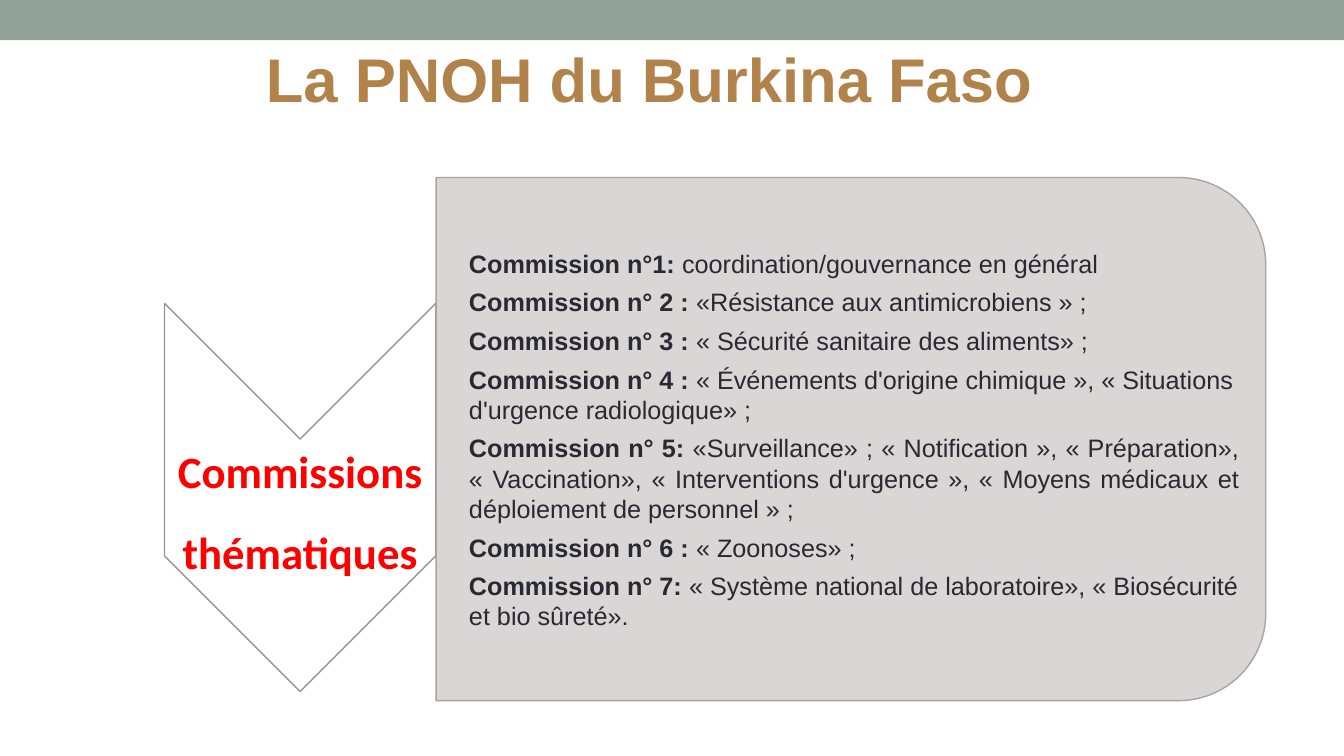
import pptx
import pptx.util
import pptx.dml.color
import pptx.enum.shapes
import pptx.enum.text
import pptx.oxml
import pptx.oxml.ns

Pt = pptx.util.Pt
Form = pptx.enum.shapes.MSO_SHAPE
Align = pptx.enum.text.PP_ALIGN
Anchor = pptx.enum.text.MSO_ANCHOR

# Content: label, text, justified
TITLE = "La PNOH du Burkina Faso"
THEME = "Commissions thématiques"
ITEMS = [
    ("Commission n°1:", "coordination/gouvernance en général", True),
    ("Commission n° 2 :", "«Résistance aux antimicrobiens » ;", False),
    ("Commission n° 3 :", "« Sécurité sanitaire des aliments» ;", False),
    ("Commission n° 4 :", "« Événements d'origine chimique », "
     "« Situations d'urgence radiologique» ;", False),
    ("Commission n° 5:", "«Surveillance» ; « Notification », « Préparation», "
     "« Vaccination», « Interventions d'urgence », "
     "« Moyens médicaux et déploiement de personnel » ;", True),
    ("Commission n° 6 :", "« Zoonoses» ;", False),
    ("Commission n° 7:", "« Système national de laboratoire», "
     "« Biosécurité et bio sûreté».", False),
]
COLORS = {"band": "93A299", "white": "FFFFFF", "edge": "969696", "red": "FF0000",
          "panel": "D5D2D1", "rim": "A5A5A5", "ink": "292934", "gold": "B1824A"}
WIDE, HIGH = 960, 540


def shade(name):
    return pptx.dml.color.RGBColor.from_string(COLORS[name])


def add_form(slide, kind, box, fill, line=None, turn=False, alpha=None):
    """Draw a shape in its visible box; turn lays it a quarter turn clockwise."""
    left, top, wide, high = box
    if turn:
        left, top = left + (wide - high) / 2, top + (high - wide) / 2
        wide, high = high, wide
    form = slide.shapes.add_shape(kind, Pt(left), Pt(top), Pt(wide), Pt(high))
    form.shadow.inherit = False
    form.rotation = 90 if turn else 0
    form.fill.solid()
    form.fill.fore_color.rgb = shade(fill)
    if alpha:
        tint = form.fill._xPr.find(".//" + pptx.oxml.ns.qn("a:srgbClr"))
        tint.append(pptx.oxml.parse_xml(
            f'<a:alpha {pptx.oxml.ns.nsdecls("a")} val="{alpha * 1000}"/>'))
    if line:
        form.line.color.rgb = shade(line)
        form.line.width = Pt(1)
    else:
        form.line.fill.background()


def add_text(slide, box, paras, size, font, color, pad=None, wrap=True,
             anchor=Anchor.MIDDLE, after=0, space=None, indent=0):
    """Write paragraphs given as (alignment, [(text, bold), ...])."""
    frame = slide.shapes.add_textbox(*map(Pt, box)).text_frame
    frame.word_wrap = wrap
    frame.vertical_anchor = anchor
    if pad:
        (frame.margin_left, frame.margin_top,
         frame.margin_right, frame.margin_bottom) = map(Pt, pad)
    for num, (align, runs) in enumerate(paras):
        para = frame.add_paragraph() if num else frame.paragraphs[0]
        para.alignment = align
        para.space_after = Pt(after)
        if space:
            para.line_spacing = space
        if indent:
            props = para._p.get_or_add_pPr()
            props.set("marL", str(Pt(indent)))
            props.set("indent", "0")
        for text, bold in runs:
            run = para.add_run()
            run.text = text
            run.font.size = Pt(size)
            run.font.name = font
            run.font.bold = bold
            run.font.color.rgb = shade(color)


def main():
    deck = pptx.Presentation()
    deck.slide_width, deck.slide_height = Pt(WIDE), Pt(HIGH)
    slide = deck.slides.add_slide(deck.slide_layouts[6])

    # Top band and title
    add_form(slide, Form.RECTANGLE, (0, 0, WIDE, 28.8), "band")
    add_text(slide, (180, 26, 568, 60.5), [(Align.CENTER, [(TITLE, True)])],
             44, "Arial", "gold", wrap=False, anchor=Anchor.TOP, after=18)

    # Chevron with the theme
    add_form(slide, Form.CHEVRON, (117.5, 216.7, 193.8, 277.2),
             "white", "edge", turn=True)
    add_text(slide, (117.5, 314, 193.8, 83), [(Align.CENTER, [(THEME, True)])],
             32, "Calibri", "red", pad=(1.5,) * 4, space=1.5)

    # Panel with the list of commissions
    add_form(slide, Form.ROUND_2_SAME_RECTANGLE, (311.5, 126.8, 592.6, 373.7),
             "panel", "rim", turn=True, alpha=90)
    paras = [(Align.JUSTIFY if full else Align.LEFT,
              [(label, True), (" " + text, False)])
             for label, text, full in ITEMS]
    add_text(slide, (311.5, 145.4, 574.6, 337), paras, 18, "Arial", "ink",
             pad=(10, 0.9, 0.9, 0.9), after=6, indent=13.5)

    deck.save("out.pptx")


if __name__ == "__main__":
    main()
